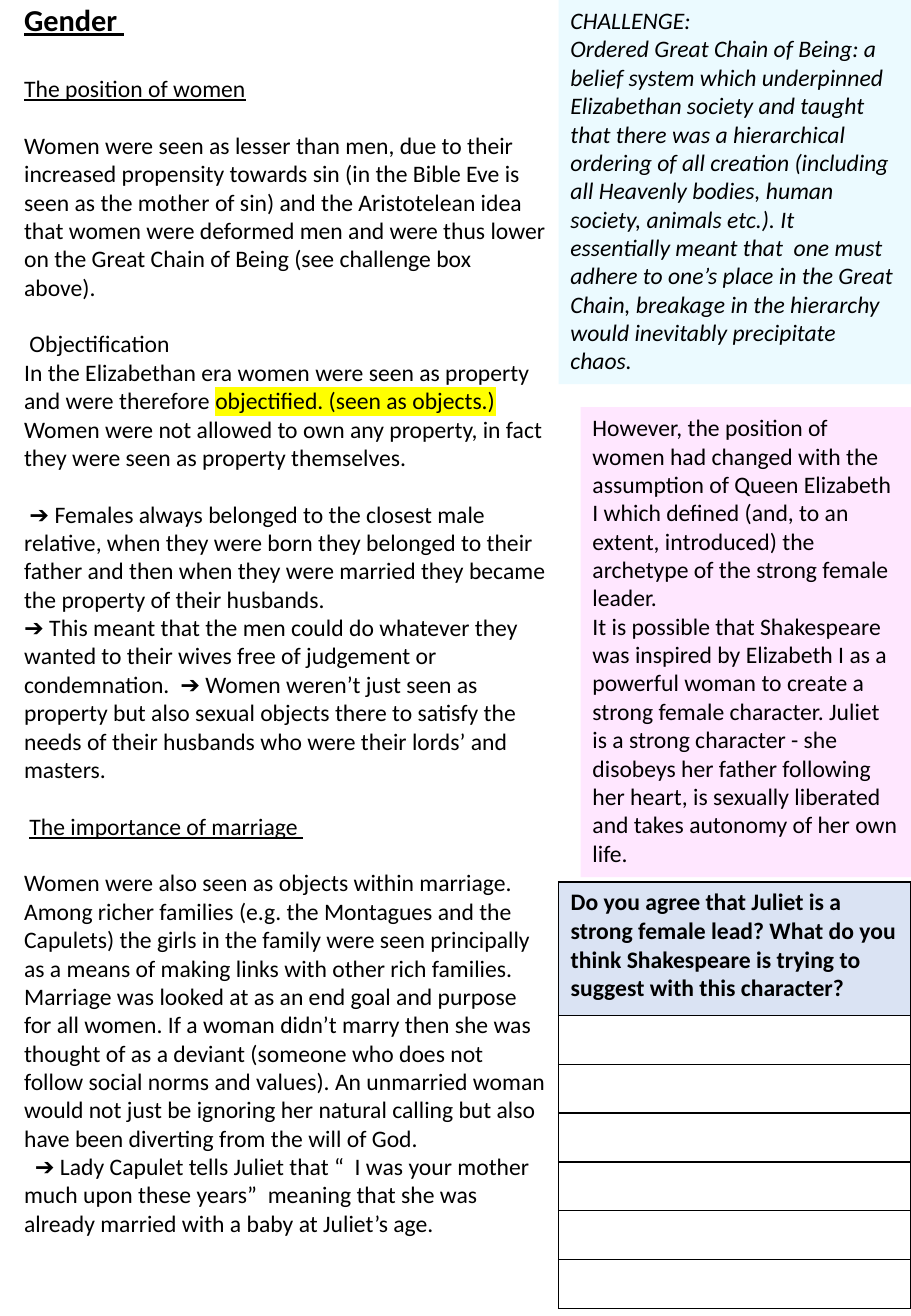
from dataclasses import dataclass

from lxml.etree import SubElement
from pptx import Presentation
from pptx.dml.color import RGBColor
from pptx.enum.shapes import MSO_SHAPE
from pptx.enum.text import MSO_ANCHOR, MSO_AUTO_SIZE, PP_ALIGN
from pptx.oxml.ns import qn
from pptx.util import Cm, Pt


@dataclass(frozen=True)
class Theme:
    font: str = "Calibri"
    title_size: float = 18
    body_size: float = 14
    section_gap: float = 16.8
    border_width: float = 1
    ink: str = "000000"
    paper: str = "FFFFFF"
    challenge: str = "EBFAFF"
    context: str = "FFE7FF"
    question: str = "DAE3F3"
    marker: str = "FFFF00"


NOTES = [
    (False, [("The position of women", "underline")]),
    (True, [("Women were seen as lesser than men, due to their increased propensity towards sin "
             "(in the Bible Eve is seen as the mother of sin) and the Aristotelean idea that women "
             "were deformed men and were thus lower on the Great Chain of Being "
             "(see challenge box above).", "")]),
    (True, [(" Objectification", "")]),
    (False, [("In the Elizabethan era women were seen as property and were therefore ", ""),
             ("objectified. (seen as objects.) ", "marker"),
             ("Women were not allowed to own any property, in fact they were seen as property "
              "themselves.", "")]),
    (True, [(" ➔ Females always belonged to the closest male relative, when they were born they "
             "belonged to their father and then when they were married they became the property "
             "of their husbands.", "")]),
    (False, [("➔ This meant that the men could do whatever they wanted to their wives free of "
              "judgement or condemnation.  ➔ Women weren’t just seen as property but also sexual "
              "objects there to satisfy the needs of their husbands who were their lords’ and "
              "masters.", "")]),
    (True, [(" ", ""), ("The importance of marriage ", "underline")]),
    (True, [("Women were also seen as objects within marriage. Among richer families (e.g. the "
             "Montagues and the Capulets) the girls in the family were seen principally as a means "
             "of making links with other rich families.", "")]),
    (False, [("Marriage was looked at as an end goal and purpose for all women. If a woman didn’t "
              "marry then she was thought of as a deviant (someone who does not follow social norms "
              "and values). An unmarried woman would not just be ignoring her natural calling but "
              "also have been diverting from the will of God.", "")]),
    (False, [("  ➔ Lady Capulet tells Juliet that “  I was your mother much upon these years”  "
              "meaning that she was already married with a baby at Juliet’s age.", "")]),
]

CHALLENGE = (
    "CHALLENGE:\n"
    "Ordered Great Chain of Being: a belief system which underpinned Elizabethan society and taught "
    "that there was a hierarchical ordering of all creation (including all Heavenly bodies, human "
    "society, animals etc.). It essentially meant that  one must adhere to one’s place in the Great "
    "Chain, breakage in the hierarchy would inevitably precipitate chaos."
)

CONTEXT = (
    "However, the position of women had changed with the assumption of Queen Elizabeth I which "
    "defined (and, to an extent, introduced) the archetype of the strong female leader.\n"
    "It is possible that Shakespeare was inspired by Elizabeth I as a powerful woman to create a "
    "strong female character. Juliet is a strong character - she disobeys her father following her "
    "heart, is sexually liberated and takes autonomy of her own life."
)

QUESTION = (
    "Do you agree that Juliet is a strong female lead? What do you think Shakespeare is trying to "
    "suggest with this character?"
)


class Handout:
    def __init__(self, slide, theme):
        self.slide = slide
        self.theme = theme

    def style(self, run, size=None, bold=False, italic=False, underline=False):
        run.font.name = self.theme.font
        run.font.size = Pt(size or self.theme.body_size)
        run.font.bold = bold
        run.font.italic = italic
        run.font.underline = underline
        run.font.color.rgb = RGBColor.from_string(self.theme.ink)

    def place(self, holder, left, top, width, height):
        holder.left, holder.top = Cm(left), Cm(top)
        holder.width, holder.height = Cm(width), Cm(height)
        frame = holder.text_frame
        frame.word_wrap = True
        frame.auto_size = MSO_AUTO_SIZE.NONE
        frame.vertical_anchor = MSO_ANCHOR.TOP
        return frame

    def title(self, wording, *box):
        frame = self.place(self.slide.shapes.title, *box)
        frame.text = wording
        frame.paragraphs[0].alignment = PP_ALIGN.LEFT
        self.style(frame.paragraphs[0].runs[0], self.theme.title_size, bold=True, underline=True)

    def mark(self, run):
        highlight = SubElement(run.font._element, qn("a:highlight"))
        SubElement(highlight, qn("a:srgbClr"), val=self.theme.marker)
        run.font._element.find(qn("a:solidFill")).addnext(highlight)

    def notes(self, entries, *box):
        frame = self.place(self.slide.placeholders[1], *box)
        for index, (opens_section, spans) in enumerate(entries):
            paragraph = frame.add_paragraph() if index else frame.paragraphs[0]
            paragraph.space_before = Pt(self.theme.section_gap if opens_section else 0)
            properties = paragraph._p.get_or_add_pPr()
            properties.set("marL", "0")
            properties.set("indent", "0")
            SubElement(properties, qn("a:buNone"))
            for wording, emphasis in spans:
                run = paragraph.add_run()
                run.text = wording
                self.style(run, underline=emphasis == "underline")
                if emphasis == "marker":
                    self.mark(run)

    def panel(self, wording, color, *box, italic=False):
        panel = self.slide.shapes.add_shape(MSO_SHAPE.RECTANGLE, *map(Cm, box))
        panel.shadow.inherit = False
        panel.fill.solid()
        panel.fill.fore_color.rgb = RGBColor.from_string(color)
        panel.line.fill.background()
        frame = self.place(panel, *box)
        frame.text = wording
        for paragraph in frame.paragraphs:
            paragraph.alignment = PP_ALIGN.LEFT
            for run in paragraph.runs:
                self.style(run, italic=italic)

    def cell(self, cell, color):
        properties = cell._tc.get_or_add_tcPr()
        for side in ("a:lnL", "a:lnR", "a:lnT", "a:lnB"):
            border = SubElement(properties, qn(side), w=str(Pt(self.theme.border_width)))
            SubElement(SubElement(border, qn("a:solidFill")), qn("a:srgbClr"), val=self.theme.ink)
        cell.fill.solid()
        cell.fill.fore_color.rgb = RGBColor.from_string(color)

    def answer_table(self, question, lines, left, top, width, head_height, line_height):
        height = head_height + lines * line_height
        table = self.slide.shapes.add_table(
            lines + 1, 1, Cm(left), Cm(top), Cm(width), Cm(height)).table
        table.horz_banding = False
        for index, row in enumerate(table.rows):
            row.height = Cm(line_height if index else head_height)
            answer = row.cells[0]
            self.cell(answer, self.theme.paper if index else self.theme.question)
            if index:
                answer.margin_top = answer.margin_bottom = Cm(0.05)
        heading = table.cell(0, 0)
        heading.text_frame.text = question
        self.style(heading.text_frame.paragraphs[0].runs[0], bold=True)


def main():
    deck = Presentation()
    deck.slide_width, deck.slide_height = Cm(19.05), Cm(27.51)
    theme = Theme()
    handout = Handout(deck.slides.add_slide(deck.slide_layouts[1]), theme)
    handout.title("Gender ", 0.25, -0.1, 11.43, 1.1)
    handout.notes(NOTES, 0.25, 1.42, 11.43, 26)
    handout.panel(CHALLENGE, theme.challenge, 11.68, 0, 7.37, 8.03, italic=True)
    handout.panel(CONTEXT, theme.context, 12.14, 8.51, 6.91, 9.83)
    handout.answer_table(QUESTION, 6, 11.68, 18.44, 7.37, 2.79, 1.02)
    deck.save("out.pptx")


if __name__ == "__main__":
    main()
